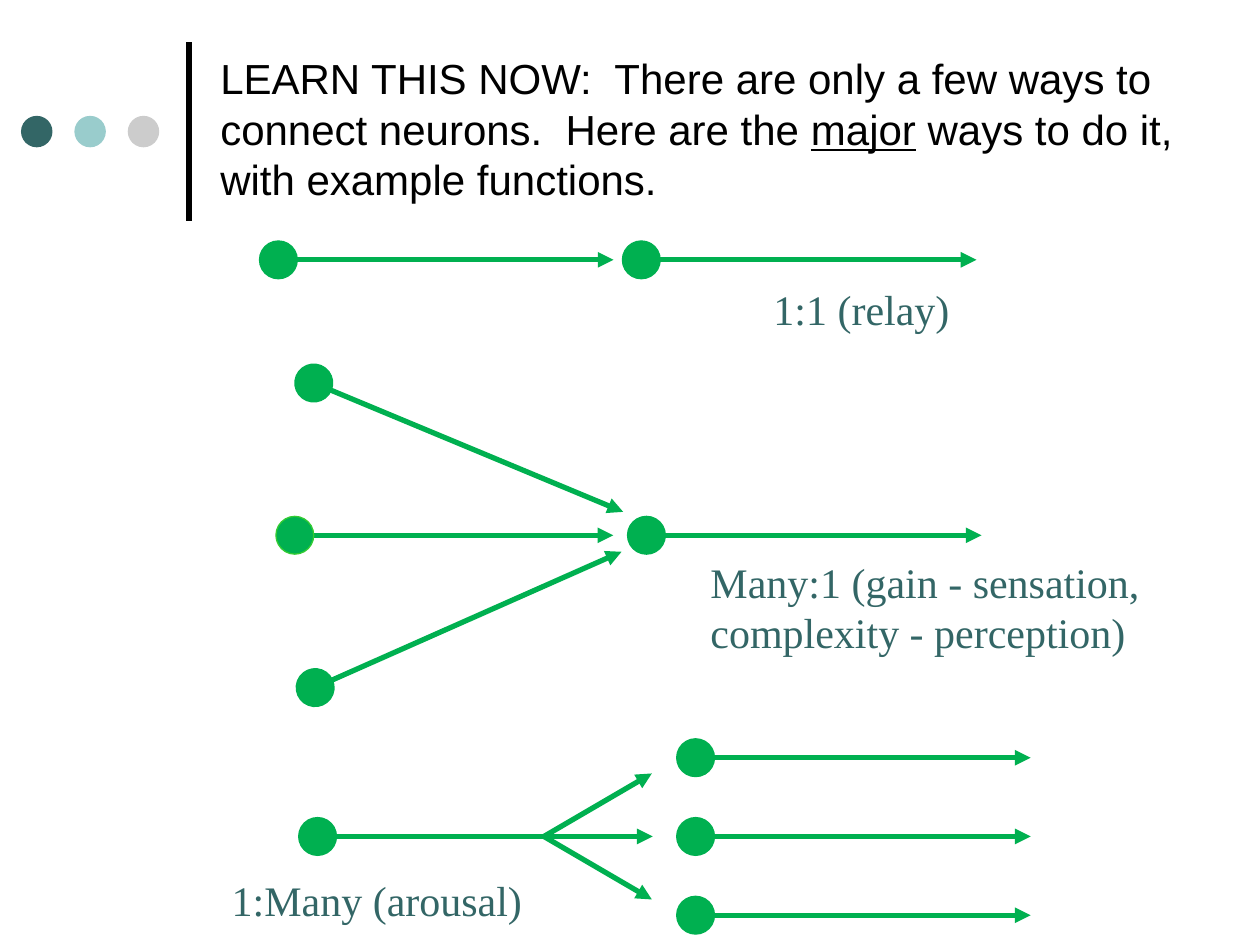
from dataclasses import dataclass
from math import cos, radians, sin

from lxml.etree import SubElement
from pptx import Presentation
from pptx.dml.color import RGBColor
from pptx.enum.shapes import MSO_CONNECTOR, MSO_SHAPE
from pptx.enum.text import MSO_AUTO_SIZE
from pptx.oxml.ns import qn
from pptx.util import Pt


@dataclass(frozen=True)
class Theme:
    ink: RGBColor = RGBColor(0x00, 0x00, 0x00)
    label: RGBColor = RGBColor(0x33, 0x66, 0x66)
    neuron: RGBColor = RGBColor(0x00, 0xB0, 0x50)
    bright_rim: RGBColor = RGBColor(0x33, 0xCC, 0x33)
    dots: tuple = (
        RGBColor(0x33, 0x66, 0x66),
        RGBColor(0x99, 0xCC, 0xCC),
        RGBColor(0xCC, 0xCC, 0xCC),
    )
    title_font: str = "Arial"
    label_font: str = "Times New Roman"
    text_size: float = 24
    stroke: float = 3
    rim: float = 0.75
    soma: float = 21.6
    axon: float = 191.5
    axon_inset: float = 1.3


THEME = Theme()


def add_line(shapes, start, end, color, arrow=False):
    line = shapes.add_connector(
        MSO_CONNECTOR.STRAIGHT, *(Pt(value) for value in (*start, *end))
    )
    line.line.color.rgb = color
    line.line.width = Pt(THEME.stroke)
    if arrow:
        SubElement(line.line._get_or_add_ln(), qn("a:tailEnd"), type="triangle")
    SubElement(line._element.spPr, qn("a:effectLst"))


def add_disc(shapes, left, top, size, fill, rim=None):
    disc = shapes.add_shape(MSO_SHAPE.OVAL, Pt(left), Pt(top), Pt(size), Pt(size))
    disc.shadow.inherit = False
    disc.fill.solid()
    disc.fill.fore_color.rgb = fill
    if rim is None:
        disc.line.fill.background()
    else:
        disc.line.color.rgb = rim
        disc.line.width = Pt(THEME.rim)
    return disc


def add_neuron(shapes, x, y, angle=0, length=THEME.axon, rim=THEME.neuron):
    dx, dy = cos(radians(angle)), sin(radians(angle))
    start = (x + THEME.axon_inset * dx, y + THEME.axon_inset * dy)
    add_line(shapes, start, (x + length * dx, y + length * dy), THEME.neuron, True)
    radius = THEME.soma / 2
    soma = add_disc(shapes, x - radius, y - radius, THEME.soma, THEME.neuron, rim)
    soma.rotation = angle


def add_text(slide, box, lines, font, color, wrap=False):
    frame = slide.shapes.add_textbox(*(Pt(value) for value in box)).text_frame
    frame.word_wrap = wrap
    frame.auto_size = MSO_AUTO_SIZE.SHAPE_TO_FIT_TEXT
    for index, runs in enumerate(lines):
        paragraph = frame.paragraphs[0] if index == 0 else frame.add_paragraph()
        for words, underlined in runs:
            run = paragraph.add_run()
            run.text = words
            run.font.name = font
            run.font.size = Pt(THEME.text_size)
            run.font.color.rgb = color
            if underlined:
                run.font.underline = True


def add_label(slide, box, *lines):
    runs = [[(line, False)] for line in lines]
    add_text(slide, box, runs, THEME.label_font, THEME.label)


def add_header(slide, left, top, width, height):
    rule_x = left + 96
    add_line(slide.shapes, (rule_x, top + height), (rule_x, top), THEME.ink)
    for index, color in enumerate(THEME.dots):
        add_disc(slide.shapes, left + index * 30.5, top + 42.2, 18, color)
    sentence = [
        ("LEARN THIS NOW:  There are only a few ways to connect neurons.  "
         "Here are the ", False),
        ("major", True),
        (" ways to do it, with example functions.", False),
    ]
    title_box = (left + 106.8, top + 2.6, width - 106.8, 94.3)
    add_text(slide, title_box, [sentence], THEME.title_font, THEME.ink, wrap=True)


def add_relay(slide, left, top, width, height):
    for offset in (10.8, 218.2):
        pair_member = slide.shapes.add_group_shape()
        add_neuron(pair_member.shapes, left + offset, top + 11)
    add_label(slide, (left + 286.6, top + height - 36, 115.2, 36), "1:1 (relay)")


def add_convergence(slide, left, top, width, height):
    middle = top + height / 2
    inputs = (
        (left + 21.6, top + 10.8, 22.6, THEME.axon, THEME.neuron),
        (left + 10.8, middle, 0, 182, THEME.bright_rim),
        (left + 22.4, top + height - 10.8, -23.9, THEME.axon, THEME.neuron),
    )
    for neuron in inputs:
        add_neuron(slide.shapes.add_group_shape().shapes, *neuron)
    add_neuron(slide.shapes.add_group_shape().shapes, left + 211.7, middle)
    add_label(
        slide,
        (left + width - 262, middle + 8.5, 262, 65.4),
        "Many:1 (gain - sensation,",
        "complexity - perception)",
    )


def add_divergence(slide, left, top, width, height):
    middle = top + height / 2
    pitch = (height - THEME.soma) / 2
    targets = slide.shapes.add_group_shape()
    for step in (-1, 0, 1):
        add_neuron(targets.shapes, left + 272.2, middle + step * pitch)
    source = slide.shapes.add_group_shape()
    add_neuron(source.shapes, left + 56.2, middle)
    for rise in (-36, 36):
        fork = (left + 185.5, middle)
        tip = (left + 247.2, middle + rise)
        add_line(source.shapes, fork, tip, THEME.neuron, True)
    add_label(slide, (left, middle + 18, 180.7, 36), "1:Many (arousal)")


def main():
    presentation = Presentation()
    presentation.slide_width = Pt(720)
    presentation.slide_height = Pt(540)
    slide = presentation.slides.add_slide(presentation.slide_layouts[6])
    add_header(slide, 12, 24, 668.4, 102)
    add_relay(slide, 148.3, 137.5, 410, 56.9)
    add_convergence(slide, 157.7, 208.1, 503.2, 195.6)
    add_divergence(slide, 125.3, 422.2, 463.6, 111.6)
    presentation.save("out.pptx")


if __name__ == "__main__":
    main()
